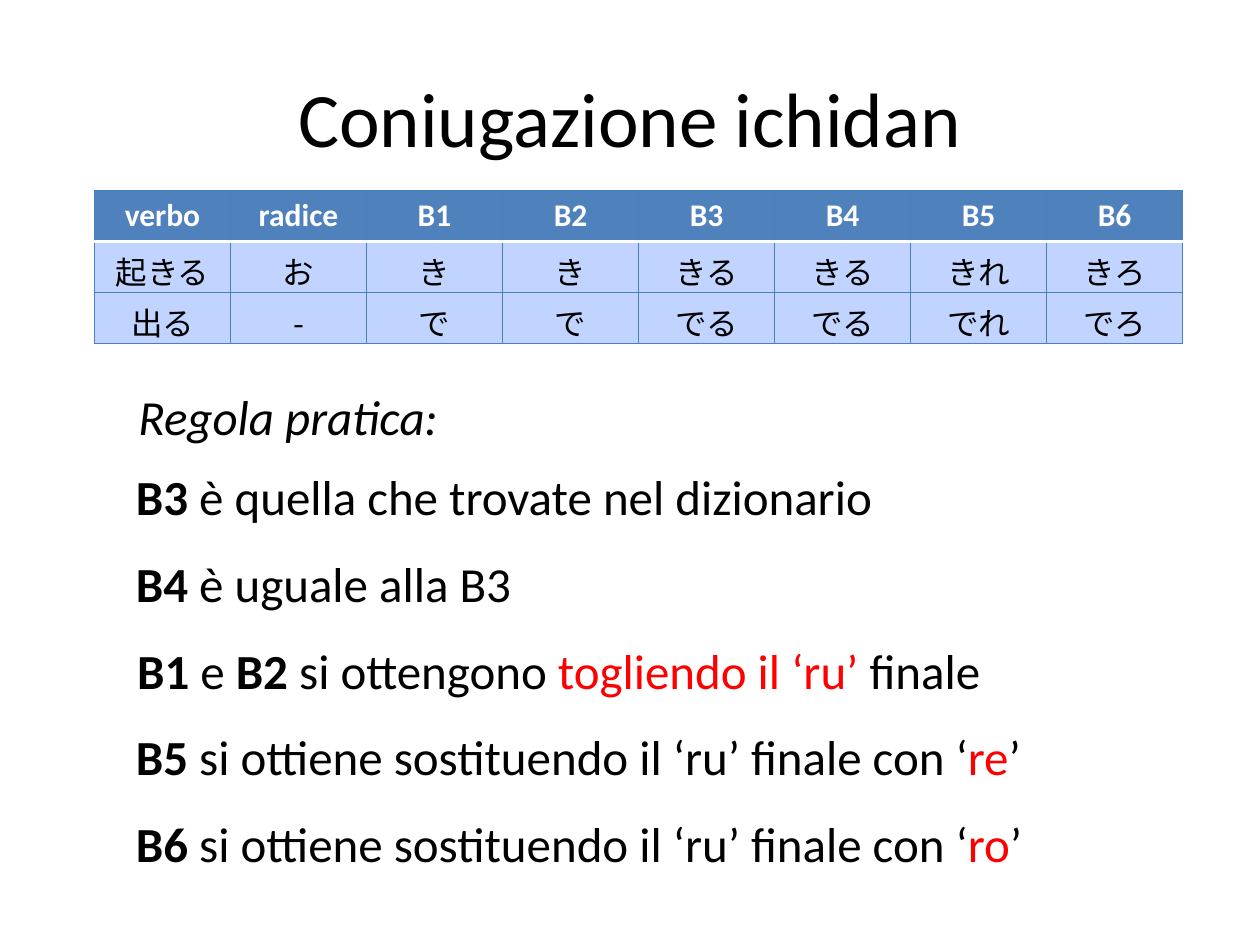
from dataclasses import dataclass

from lxml.etree import SubElement
from pptx import Presentation
from pptx.dml.color import RGBColor as RGB
from pptx.enum.text import MSO_ANCHOR as Anchor, MSO_AUTO_SIZE as Auto, PP_ALIGN as Align
from pptx.oxml.ns import qn
from pptx.util import Pt


@dataclass(frozen=True)
class Theme:
    latin: str = "Calibri"
    japanese: str = "Noto Sans CJK JP"
    black: str = "000000"
    white: str = "FFFFFF"
    red: str = "FF0000"
    header: str = "4F81BD"
    body: str = "C0D4FF"
    border: str = "4B7EBC"
    title_size: int = 44
    rule_size: int = 28
    table_size: int = 18


T = Theme()
PLAIN, BOLD, ITALIC = {}, {"bold": True}, {"italic": True}
RED = {"color": T.red}

VERBS = [
    ["verbo", "radice", "B1", "B2", "B3", "B4", "B5", "B6"],
    ["起きる", "お", "き", "き", "きる", "きる", "きれ", "きろ"],
    ["出る", "-", "で", "で", "でる", "でる", "でれ", "でろ"],
]

REPLACE = " si ottiene sostituendo il ‘ru’ finale con ‘"
# Left, width and runs of each rule, from top to bottom
RULES = [
    (70.6, 453.6, [("B3", BOLD), (" è quella che trovate nel dizionario", PLAIN)]),
    (70.6, 231.1, [("B4", BOLD), (" è uguale alla B3", PLAIN)]),
    (71.3, 501.1, [("B1", BOLD), (" e ", PLAIN), ("B2", BOLD), (" si ottengono ", PLAIN),
                   ("togliendo il ‘ru’ ", RED), ("finale", PLAIN)]),
    (70.6, 526.3, [("B5", BOLD), (REPLACE, PLAIN), ("re", RED), ("’", PLAIN)]),
    (70.6, 526.3, [("B6", BOLD), (REPLACE, PLAIN), ("ro", RED), ("’", PLAIN)]),
]


def add_run(p, text, size, color=T.black, name=T.latin, **style):
    r = p.add_run()
    r.text = text
    for key, value in {"size": Pt(size), "name": name, **style}.items():
        setattr(r.font, key, value)
    r.font.color.rgb = RGB.from_string(color)
    if name == T.japanese:
        SubElement(r.font._element, qn("a:ea"), typeface=name)


def add_text(s, box, runs, size, align=Align.LEFT, **frame):
    tf = s.shapes.add_textbox(*map(Pt, box)).text_frame
    for key, value in frame.items():
        setattr(tf, key, value)
    p = tf.paragraphs[0]
    p.alignment = align
    for text, style in runs:
        add_run(p, text, size, **style)


def add_title(s, box):
    add_text(s, box, [("Coniugazione ichidan", PLAIN)], T.title_size, Align.CENTER,
             word_wrap=True, vertical_anchor=Anchor.MIDDLE)


def set_border(cell, side, color, width):
    ln = SubElement(cell._tc.get_or_add_tcPr(), qn(f"a:ln{side}"), w=str(Pt(width)))
    SubElement(SubElement(ln, qn("a:solidFill")), qn("a:srgbClr"), val=color)


def add_verb_table(s, box):
    table = s.shapes.add_table(len(VERBS), len(VERBS[0]), *map(Pt, box)).table
    for column in table.columns:
        column.width = Pt(box[2] / len(VERBS[0]))
    for i, words in enumerate(VERBS):
        head = i == 0
        style = ({"color": T.white, "bold": True} if head
                 else {"name": T.japanese, "bold": False})
        for j, word in enumerate(words):
            cell = table.cell(i, j)
            # Borders come before the fill; a white line parts header and body
            for side in "LRTB":
                divider = (i, side) in ((0, "B"), (1, "T"))
                set_border(cell, side, *((T.white, 2) if divider else (T.border, 0.75)))
            cell.fill.solid()
            cell.fill.fore_color.rgb = RGB.from_string(T.header if head else T.body)
            p = cell.text_frame.paragraphs[0]
            p.alignment = Align.CENTER
            add_run(p, word, T.table_size, **style)


def add_rules(s, top, pitch, height):
    frame = {"word_wrap": False, "auto_size": Auto.SHAPE_TO_FIT_TEXT}
    add_text(s, (72, top, 188, height), [("Regola pratica:", ITALIC)], T.rule_size, **frame)
    first = top + 45.4
    for i, (left, width, runs) in enumerate(RULES):
        add_text(s, (left, first + i * pitch, width, height), runs, T.rule_size, **frame)


def main():
    prs = Presentation()
    prs.slide_width, prs.slide_height = Pt(720), Pt(540)
    s = prs.slides.add_slide(prs.slide_layouts[6])
    add_title(s, (36, 21.6, 648, 90))
    add_verb_table(s, (54, 108.7, 622, 87.6))
    add_rules(s, top=217.4, pitch=49.7, height=41)
    prs.save("out.pptx")


if __name__ == "__main__":
    main()
